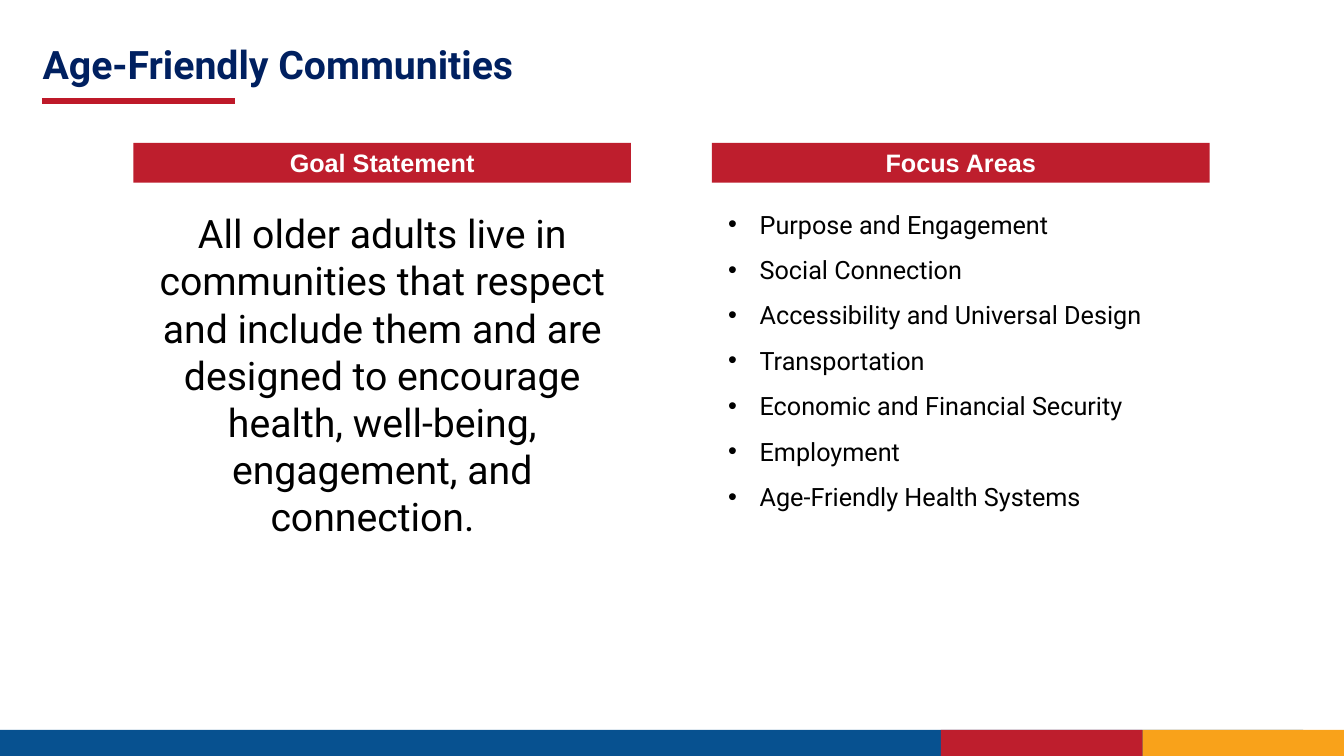
from lxml.etree import SubElement
from pptx import Presentation
from pptx.dml.color import RGBColor
from pptx.enum.shapes import MSO_CONNECTOR, MSO_SHAPE
from pptx.enum.text import MSO_ANCHOR, PP_ALIGN
from pptx.oxml.ns import qn
from pptx.util import Emu, Pt

EMU_PER_PX = 9525  # 96 px to the inch
SLIDE_WIDTH, SLIDE_HEIGHT = 1280, 720

NAVY = RGBColor(0x00, 0x20, 0x60)
BLUE = RGBColor(0x07, 0x51, 0x90)
RED = RGBColor(0xBE, 0x1E, 0x2D)
RULE_RED = RGBColor(0xBE, 0x19, 0x29)
ORANGE = RGBColor(0xF9, 0xA2, 0x1A)
BLACK = RGBColor(0x00, 0x00, 0x00)
WHITE = RGBColor(0xFF, 0xFF, 0xFF)

GOAL = (
    "All older adults live in communities that respect and include them "
    "and are designed to encourage health, well-being, engagement, and "
    "connection.  "
)
FOCUS_AREAS = [
    "Purpose and Engagement",
    "Social Connection",
    "Accessibility and Universal Design",
    "Transportation",
    "Economic and Financial Security",
    "Employment",
    "Age-Friendly Health Systems",
]


def px(length):
    return Emu(length * EMU_PER_PX)


def set_font(para, name, size, color, bold=False):
    font = para.font
    font.name, font.size, font.bold = name, Pt(size), bold
    font.color.rgb = color


def add_block(page, box, color):
    block = page.shapes.add_shape(MSO_SHAPE.RECTANGLE, *map(px, box))
    block.shadow.inherit = False
    block.fill.solid()
    block.fill.fore_color.rgb = color
    block.line.fill.background()
    return block


def add_text_frame(page, box):
    frame = page.shapes.add_textbox(*map(px, box)).text_frame
    frame.word_wrap = True
    return frame


def add_bullet(para, indent):
    properties = para._p.get_or_add_pPr()
    properties.set("marL", str(px(indent)))
    properties.set("indent", str(-px(indent)))
    SubElement(properties, qn("a:buFont"), typeface="Arial")
    SubElement(properties, qn("a:buChar"), char="•")


def add_footer(page, box):
    left, top, width, height = box
    accent = 192
    # The blue band runs on beneath the two accents at the right end
    add_block(page, (left, top, width - 39, height), BLUE)
    for place, color in ((1, ORANGE), (2, RED)):
        add_block(page, (left + width - place * accent, top, accent, height), color)


def add_title(page, box):
    left, top, width, height = box
    title = page.shapes.title
    title.left, title.top, title.width, title.height = map(px, box)
    frame = title.text_frame
    frame.text = "Age-Friendly Communities"
    frame.word_wrap = True
    frame.vertical_anchor = MSO_ANCHOR.MIDDLE
    para = frame.paragraphs[0]
    para.alignment = PP_ALIGN.LEFT
    para.line_spacing = 0.9
    set_font(para, "Roboto", 28, NAVY, bold=True)

    # Rule under the title
    rule_left, rule_top = left + 9, top + 76
    rule = page.shapes.add_connector(
        MSO_CONNECTOR.STRAIGHT,
        px(rule_left), px(rule_top), px(rule_left + 184), px(rule_top),
    )
    rule.line.color.rgb = RULE_RED
    rule.line.width = Pt(4.5)
    SubElement(rule._element.spPr, qn("a:effectLst"))


def add_heading(page, box, text):
    left, top, width, _ = box
    frame = add_block(page, (left, top, width, 38), RED).text_frame
    frame.text = text
    frame.word_wrap = True
    frame.vertical_anchor = MSO_ANCHOR.TOP
    para = frame.paragraphs[0]
    para.alignment = PP_ALIGN.CENTER
    set_font(para, "Arial", 18, WHITE, bold=True)


def add_goal_column(page, box):
    left, top, width, height = box
    add_heading(page, box, "Goal Statement")
    frame = add_text_frame(page, (left, top + 59, width, height - 72))
    frame.text = GOAL
    para = frame.paragraphs[0]
    para.alignment = PP_ALIGN.CENTER
    set_font(para, "Roboto", 28, BLACK)


def add_focus_column(page, box):
    left, top, width, height = box
    add_heading(page, box, "Focus Areas")
    frame = add_text_frame(page, (left + 6, top + 44, width - 5, height - 44))
    frame.text = "\n".join(FOCUS_AREAS)
    for para in frame.paragraphs:
        para.line_spacing = 1.5
        add_bullet(para, 30)
        set_font(para, "Roboto", 18, BLACK)


def main():
    deck = Presentation()
    deck.slide_width, deck.slide_height = px(SLIDE_WIDTH), px(SLIDE_HEIGHT)
    page = deck.slides.add_slide(deck.slide_layouts[5])
    add_footer(page, (0, 695, SLIDE_WIDTH, 25))
    add_title(page, (31, 20, 1152, 88))
    add_goal_column(page, (127, 136, 474, 398))
    add_focus_column(page, (678, 136, 474, 398))
    deck.save("out.pptx")


if __name__ == "__main__":
    main()
